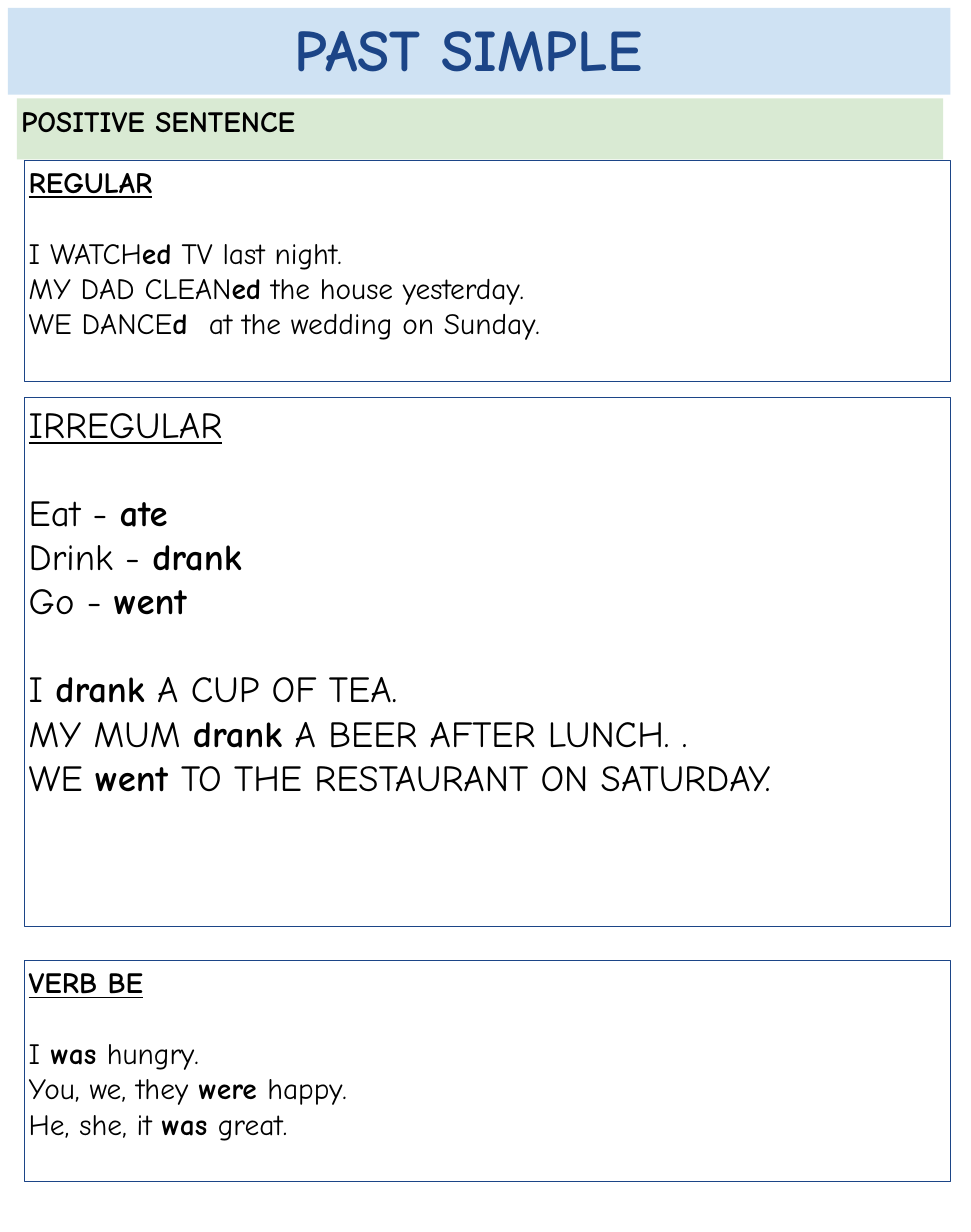
from pptx import Presentation
from pptx.dml.color import RGBColor
from pptx.enum.text import MSO_ANCHOR, MSO_AUTO_SIZE, PP_ALIGN
from pptx.oxml import parse_xml
from pptx.oxml.ns import nsdecls
from pptx.util import Cm, Pt

COLOURS = {"navy": "1C4587", "sky": "CFE2F3", "mint": "D9EAD3", "black": "000000"}
FONT = "Comic Neue"
LEFT, WIDTH = 1.4, 53.31
REGULAR = [
    ["*REGULAR*"],
    ["I WATCH*ed* TV last night.",
     "MY DAD CLEAN*ed* the house yesterday.",
     "WE DANCE*d  *at the wedding on Sunday."],
]
IRREGULAR = [
    ["IRREGULAR"],
    ["Eat - *ate*", "Drink - *drank*", "Go - *went*"],
    ["I *drank* A CUP OF TEA.",
     "MY MUM *drank* A BEER AFTER LUNCH. .",
     "WE *went *TO THE RESTAURANT ON SATURDAY."],
]
VERB_BE = [
    ["*VERB BE*"],
    ["I* was *hungry.", "You, we, they* were *happy.", "He, she, it *was *great."],
]


class GrammarSheet:
    """Style and current slide; text between asterisks is set in bold."""

    def __init__(self, slide):
        self.slide = slide

    def place(self, index, left, top, width, height):
        shape = self.slide.placeholders[index]
        shape.left, shape.top = Cm(left), Cm(top)
        shape.width, shape.height = Cm(width), Cm(height)
        frame = shape.text_frame
        frame.word_wrap = True
        frame.auto_size = MSO_AUTO_SIZE.NONE
        frame.vertical_anchor = MSO_ANCHOR.TOP
        frame.margin_left = frame.margin_right = Cm(0.25)
        frame.margin_top = frame.margin_bottom = Cm(0.25)
        return shape

    def sentence(self, paragraph, text, size, colour="black", underline=False):
        paragraph.alignment = PP_ALIGN.LEFT
        paragraph.space_before = Pt(0)
        properties = paragraph._p.get_or_add_pPr()
        properties.set("marL", "0")
        properties.set("indent", "0")
        properties.append(parse_xml(f"<a:buNone {nsdecls('a')}/>"))
        for position, part in enumerate(text.split("*")):
            if part:
                run = paragraph.add_run()
                run.text = part
                run.font.name = FONT
                run.font.size = Pt(size)
                run.font.bold = position % 2 == 1
                run.font.underline = underline
                run.font.color.rgb = RGBColor.from_string(COLOURS[colour])

    def banner(self, index, box, text, size, fill, colour="black", alignment=PP_ALIGN.LEFT):
        shape = self.place(index, *box)
        shape.fill.solid()
        shape.fill.fore_color.rgb = RGBColor.from_string(COLOURS[fill])
        paragraph = shape.text_frame.paragraphs[0]
        self.sentence(paragraph, text, size, colour)
        paragraph.alignment = alignment

    def panel(self, index, top, height, groups, size):
        shape = self.place(index, LEFT, top, WIDTH, height)
        shape.line.color.rgb = RGBColor.from_string(COLOURS["navy"])
        shape.line.width = Pt(0.75)
        frame = shape.text_frame
        for group_number, lines in enumerate(groups):
            for line_number, line in enumerate(lines):
                is_heading = group_number == 0
                paragraph = frame.paragraphs[0] if is_heading else frame.add_paragraph()
                self.sentence(paragraph, line, size, underline=is_heading)
                if line_number == 0 and not is_heading:
                    paragraph.space_before = Pt(1.2 * size)


def main():
    presentation = Presentation()
    presentation.slide_width, presentation.slide_height = Cm(55.88), Cm(70.87)
    sheet = GrammarSheet(presentation.slides.add_slide(presentation.slide_layouts[4]))
    sheet.banner(0, (0.46, 0.46, 54.23, 4.98), "*PAST SIMPLE *", 96, "sky", "navy",
                 PP_ALIGN.CENTER)
    sheet.banner(1, (0.97, 5.66, WIDTH, 3.51), "*POSITIVE SENTENCE*", 48, "mint")
    sheet.panel(2, 9.19, 12.75, REGULAR, 48)
    sheet.panel(3, 22.83, 30.45, IRREGULAR, 60)
    sheet.panel(4, 55.22, 12.75, VERB_BE, 48)
    presentation.save("out.pptx")


if __name__ == "__main__":
    main()
